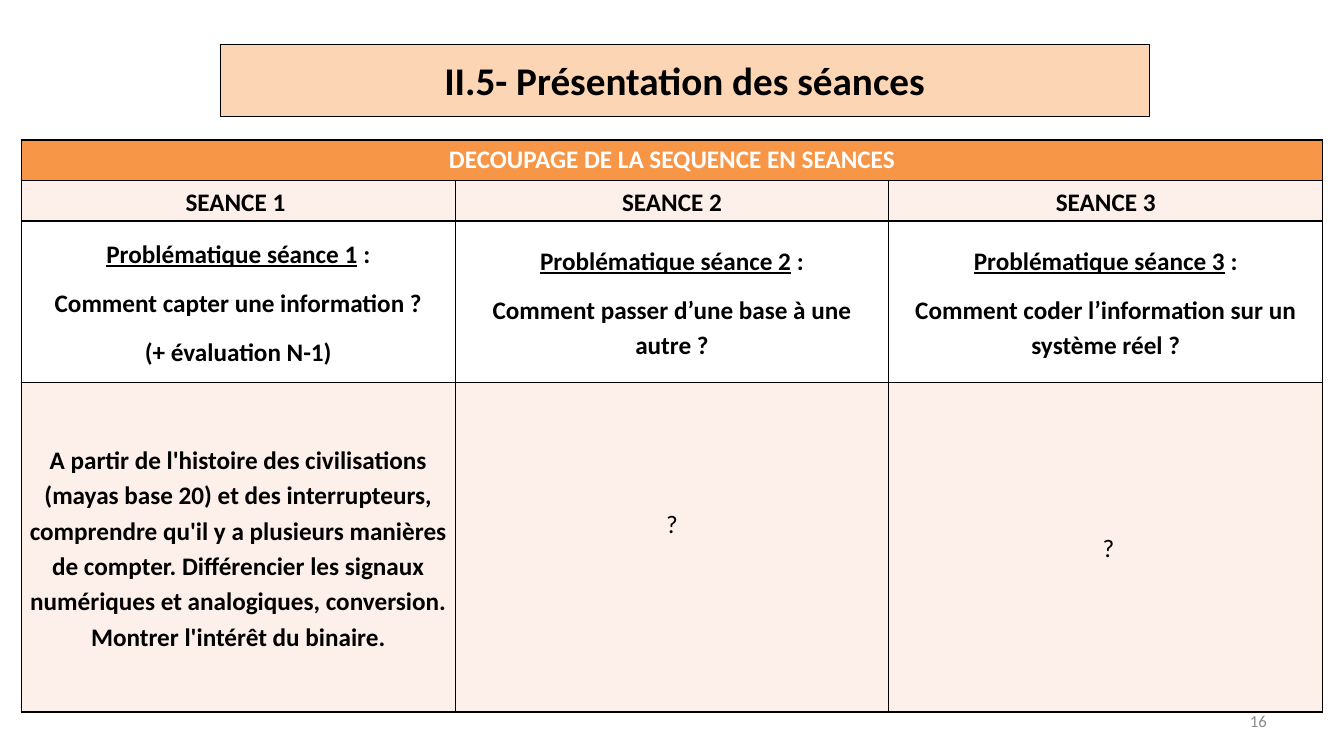
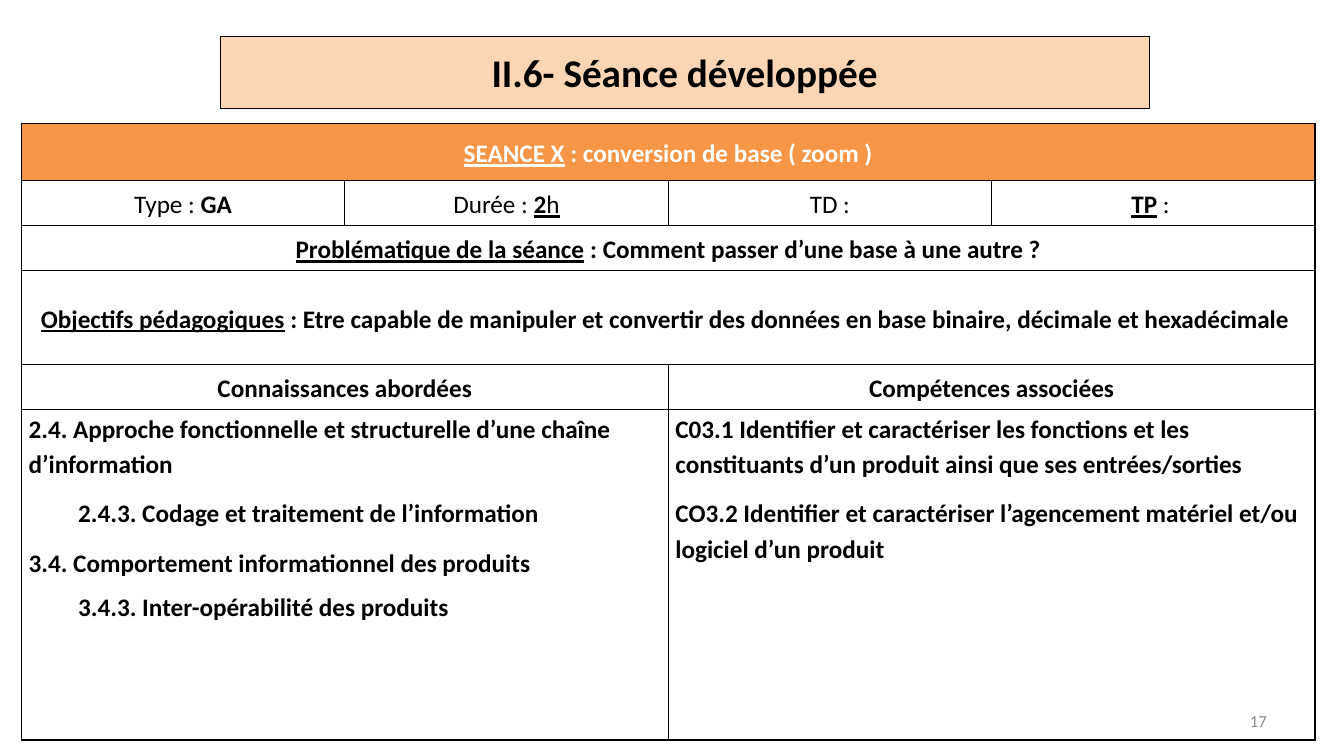
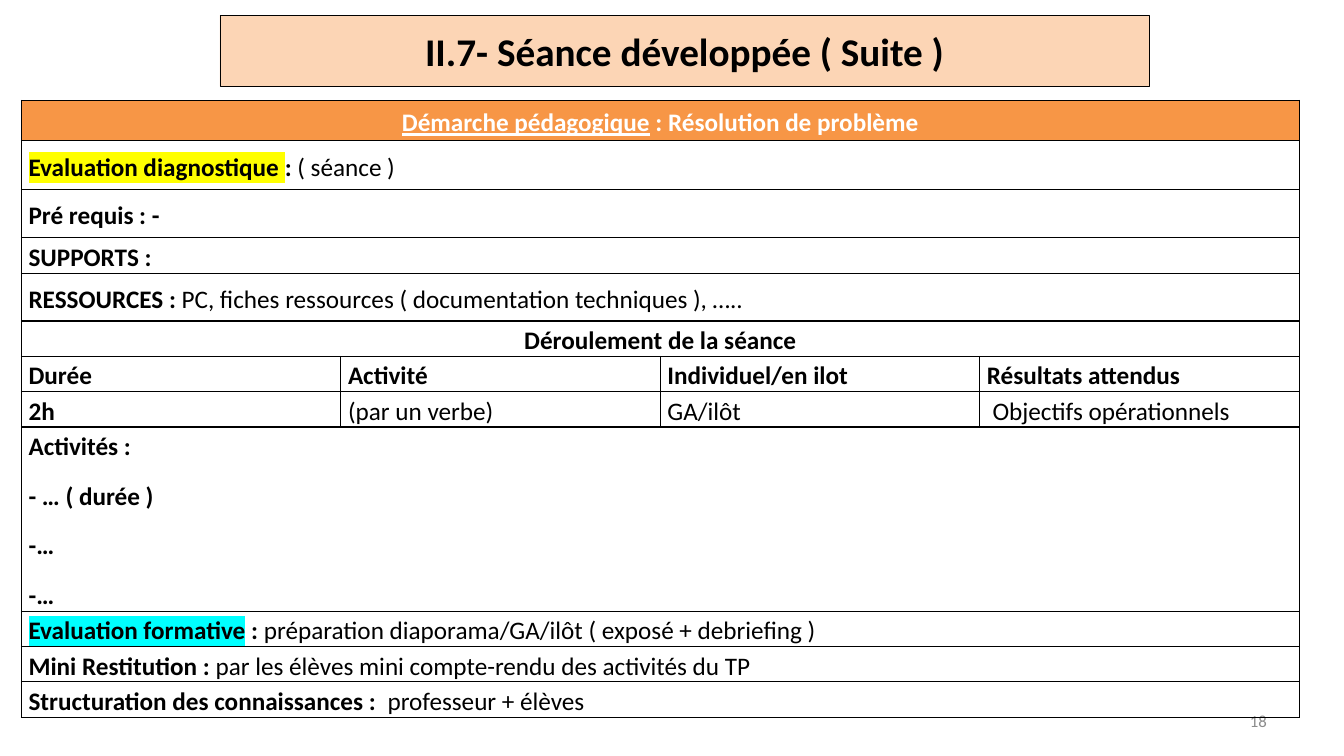
"""Build three slides that present the sessions of a teaching sequence."""
from collections import namedtuple
from dataclasses import dataclass

from lxml.etree import SubElement
from pptx import Presentation
from pptx.dml.color import RGBColor
from pptx.enum.text import MSO_ANCHOR as Anchor, MSO_AUTO_SIZE as AutoSize, PP_ALIGN as Align
from pptx.oxml.ns import qn
from pptx.util import Cm, Pt


@dataclass(frozen=True)
class Theme:
    font: str = "Calibri"
    black: str = "000000"
    white: str = "FFFFFF"
    grey: str = "8C8C8C"
    orange: str = "F79646"
    peach: str = "FCD5B5"
    blush: str = "FDEFE9"
    yellow: str = "FFFF00"
    cyan: str = "00FFFF"
    title_size: int = 28
    body_size: int = 18
    number_size: int = 12


Style = namedtuple("Style", "bold underline highlight", defaults=(False, False, None))
Line = namedtuple("Line", "runs indent spacing")
Row = namedtuple("Row", "height cells align anchor fill color")
Page = namedtuple("Page", "number title title_top table_top column_width columns rows")

theme = Theme()
PLAIN = Style()
BOLD = Style(bold=True)
UNDERLINED = Style(underline=True)
HEADING = Style(bold=True, underline=True)
DIAGNOSTIC = Style(bold=True, highlight=theme.yellow)
FORMATIVE = Style(bold=True, highlight=theme.cyan)


def line(*runs, indent=0, spacing=1.15):
    pairs = [(run, BOLD) if isinstance(run, str) else run for run in runs]
    return Line(pairs, indent, spacing)


def add_run(paragraph, text, style, size, color):
    run = paragraph.add_run()
    run.text = text
    font = run.font
    font.size = Pt(size)
    font.bold = style.bold
    font.underline = style.underline
    font.color.rgb = RGBColor.from_string(color)
    if style.highlight:
        highlight = SubElement(run._r.get_or_add_rPr(), qn("a:highlight"))
        SubElement(highlight, qn("a:srgbClr"), val=style.highlight)
    font.name = theme.font


body = Row(0, [], Align.CENTER, Anchor.MIDDLE, None, theme.black)
left = body._replace(align=Align.LEFT)
header = body._replace(fill=theme.orange, color=theme.white)
tinted = body._replace(fill=theme.blush)

sessions = [
    header._replace(height=1.02, cells=[
        [line("DECOUPAGE DE LA SEQUENCE EN SEANCES", spacing=1)]]),
    tinted._replace(height=1.02, cells=[
        [line(label)] for label in ("SEANCE 1 ", "SEANCE 2", "SEANCE 3")]),
    body._replace(height=4.06, fill=theme.white, cells=[
        [line((f"Problématique séance {number}", HEADING), " :"), *map(line, questions)]
        for number, questions in enumerate([
            ["Comment capter une information ?", "(+ évaluation N-1)"],
            ["Comment passer d’une base à une autre ?"],
            ["Comment coder l’information sur un système réel ?"],
        ], start=1)]),
    tinted._replace(height=8.31, cells=[
        [line("A partir de l'histoire des civilisations (mayas base 20) et des interrupteurs, "
              "comprendre qu'il y a plusieurs manières de compter. Différencier les signaux "
              "numériques et analogiques, conversion. Montrer l'intérêt du binaire.")],
        [line(("?", PLAIN))],
        [line((" ?", PLAIN))]]),
]

developed = [
    header._replace(height=1.42, cells=[
        [line(("SEANCE X", HEADING), " : conversion de base ( zoom )")]]),
    body._replace(height=1.14, cells=[
        [line(("Type :", PLAIN), " GA")],
        [line(("Durée : ", PLAIN), ("2", HEADING), ("h", UNDERLINED))],
        [line(("TD :", PLAIN))],
        [line(("TP", HEADING), (" : ", PLAIN))]]),
    body._replace(height=1.14, cells=[
        [line(("Problématique de la séance", HEADING),
              " : Comment passer d’une base à une autre ?")]]),
    body._replace(height=2.36, cells=[
        [line(("Objectifs pédagogiques", HEADING),
              " : Etre capable de manipuler et convertir des données en base binaire, "
              "décimale et hexadécimale ")]]),
    body._replace(height=1.14, cells=[
        [line("Connaissances abordées")],
        [line("Compétences associées")]]),
    left._replace(height=8.33, anchor=Anchor.TOP, cells=[
        [line("2.4. Approche fonctionnelle et structurelle d’une chaîne d’information"),
         line("2.4.3. Codage et traitement de l’information", indent=1.25),
         line("3.4. Comportement informationnel des produits"),
         line("3.4.3. Inter-opérabilité des produits", indent=1.25, spacing=1)],
        [line("C03.1 Identifier et caractériser les fonctions et les constituants d’un produit "
              "ainsi que ses entrées/sorties"),
         line("CO3.2 Identifier et caractériser l’agencement matériel et/ou logiciel "
              "d’un produit")]]),
]

continued = [
    header._replace(height=1.02, cells=[
        [line(("Démarche pédagogique", HEADING), " : Résolution de problème")]]),
    left._replace(height=1.22, cells=[
        [line(("Evaluation diagnostique ", DIAGNOSTIC), ": ", ("( séance )", PLAIN))]]),
    left._replace(height=1.22, cells=[[line("Pré requis : -")]]),
    left._replace(height=0.91, cells=[[line("SUPPORTS :")]]),
    left._replace(height=1.19, cells=[
        [line("RESSOURCES : ",
              ("PC, fiches ressources ( documentation techniques ), …..", PLAIN))]]),
    body._replace(height=0.89, cells=[[line("Déroulement de la séance")]]),
    left._replace(height=0.89, cells=[
        [line(label)] for label in
        ("Durée", "Activité", "Individuel/en ilot", "Résultats attendus")]),
    left._replace(height=0.89, cells=[
        [line("2h")],
        [line(("(par un verbe)", PLAIN))],
        [line(("GA/ilôt", PLAIN))],
        [line(" ", ("Objectifs opérationnels", PLAIN))]]),
    left._replace(height=4.64, cells=[
        [line(text) for text in ("Activités :", "- … ( durée )", "-…", "-…")]]),
    left._replace(height=0.89, cells=[
        [line(("Evaluation formative", FORMATIVE), " : ",
              ("préparation diaporama/GA/ilôt ( exposé + debriefing )", PLAIN))]]),
    left._replace(height=0.89, cells=[
        [line("Mini Restitution : ",
              ("par les élèves mini compte-rendu des activités du TP", PLAIN))]]),
    left._replace(height=0.89, cells=[
        [line("Structuration des connaissances :  ", ("professeur + élèves", PLAIN))]]),
]

pages = [
    Page(16, "II.5- Présentation des séances", 1.12, 3.53, 10.93, 3, sessions),
    Page(17, "II.6- Séance développée", 0.92, 3.12, 8.15, 4, developed),
    Page(18, "II.7- Séance développée ( Suite )", 0.38, 2.53, 8.05, 4, continued),
]

presentation = Presentation()
presentation.slide_width = Cm(33.87)
presentation.slide_height = Cm(19.05)
title_only = presentation.slide_layouts[5]
tables = []

for page in pages:
    slide = presentation.slides.add_slide(title_only)

    number_box = slide.shapes.add_textbox(Cm(24.28), Cm(17.65), Cm(7.9), Cm(1.02))
    number_box.text_frame.word_wrap = True
    number_box.text_frame.vertical_anchor = Anchor.MIDDLE
    paragraph = number_box.text_frame.paragraphs[0]
    paragraph.alignment = Align.RIGHT
    add_run(paragraph, str(page.number), PLAIN, theme.number_size, theme.grey)

    title = slide.shapes.title
    title.left, title.top = Cm(5.54), Cm(page.title_top)
    title.width, title.height = Cm(23.42), Cm(1.8)
    title.fill.solid()
    title.fill.fore_color.rgb = RGBColor.from_string(theme.peach)
    title.line.color.rgb = RGBColor.from_string(theme.black)
    title.line.width = Pt(0.25)
    title.text_frame.auto_size = AutoSize.NONE
    title.text_frame.vertical_anchor = Anchor.MIDDLE
    paragraph = title.text_frame.paragraphs[0]
    paragraph.alignment = Align.CENTER
    add_run(paragraph, page.title, BOLD, theme.title_size, theme.black)

    table = slide.shapes.add_table(
        len(page.rows), page.columns, Cm(0.54), Cm(page.table_top),
        Cm(page.column_width * page.columns), Cm(sum(row.height for row in page.rows))).table
    tables.append(table)
    table.first_row = False
    table.horz_banding = False
    for column in table.columns:
        column.width = Cm(page.column_width)

    for row_index, row in enumerate(page.rows):
        table.rows[row_index].height = Cm(row.height)
        for cell in table.rows[row_index].cells:
            cell.margin_left = cell.margin_right = Cm(0.18)
            cell.margin_top = cell.margin_bottom = 0
            cell.vertical_anchor = row.anchor
            for side in ("a:lnL", "a:lnR", "a:lnT", "a:lnB"):
                border = SubElement(cell._tc.get_or_add_tcPr(), qn(side), w=str(Pt(1)))
                border_fill = SubElement(border, qn("a:solidFill"))
                SubElement(border_fill, qn("a:srgbClr"), val=theme.black)
            if row.fill:
                cell.fill.solid()
                cell.fill.fore_color.rgb = RGBColor.from_string(row.fill)
            else:
                cell.fill.background()

        span = page.columns // len(row.cells)
        for cell_index, lines in enumerate(row.cells):
            first = cell_index * span
            cell = table.cell(row_index, first)
            if span > 1:
                cell.merge(table.cell(row_index, first + span - 1))
            for line_index, content in enumerate(lines):
                frame = cell.text_frame
                paragraph = frame.add_paragraph() if line_index else frame.paragraphs[0]
                paragraph.alignment = row.align
                paragraph.line_spacing = content.spacing
                paragraph.space_after = Pt(10)
                if content.indent:
                    paragraph._p.get_or_add_pPr().set("marL", str(Cm(content.indent)))
                for text, style in content.runs:
                    add_run(paragraph, text, style, theme.body_size, row.color)

tables[0].cell(3, 1).margin_bottom = Cm(1.25)

presentation.save("out.pptx")
